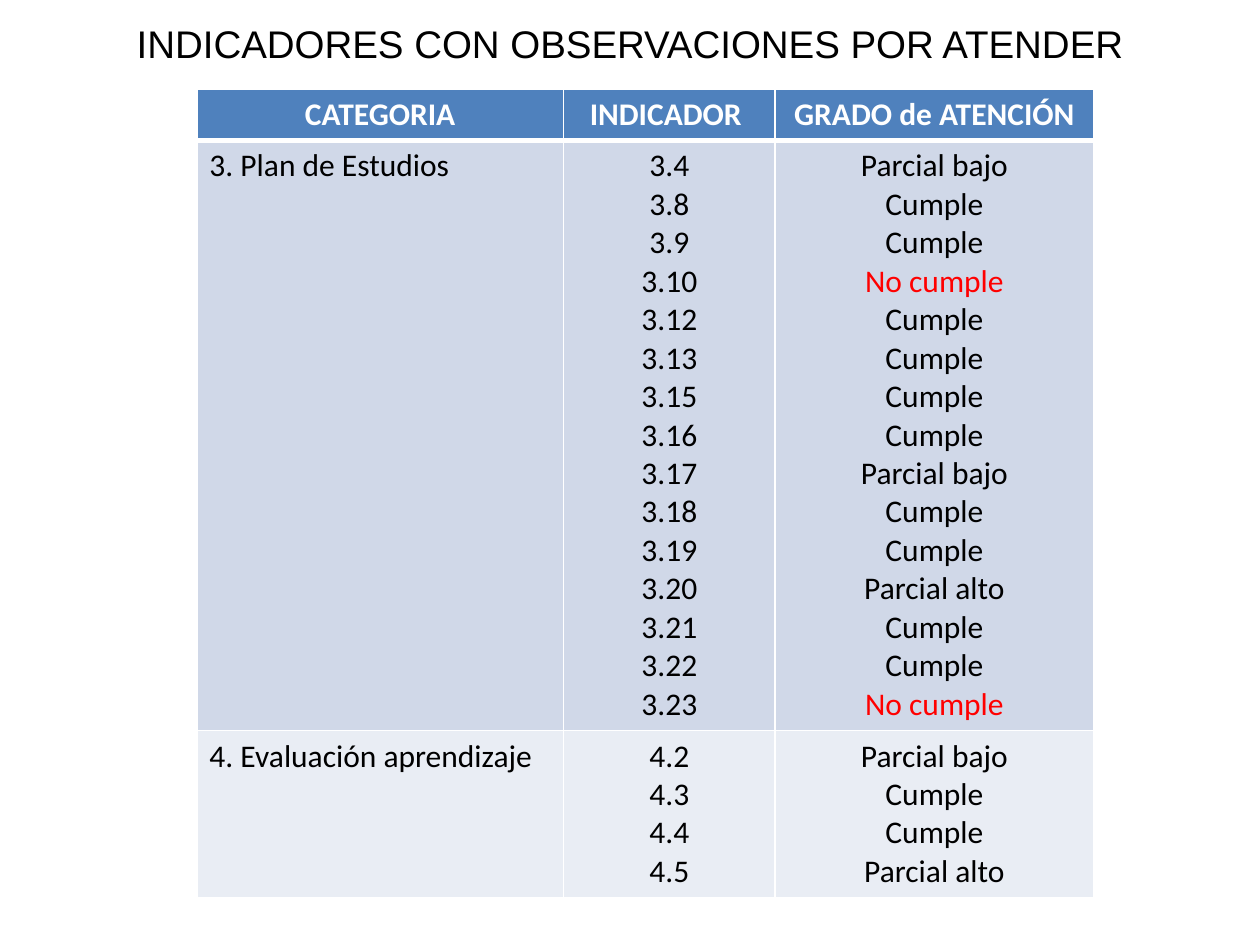
import dataclasses

import lxml.etree
import pptx
import pptx.dml.color
import pptx.enum.text
import pptx.oxml.ns
import pptx.util

Pt = pptx.util.Pt
ALIGN = pptx.enum.text.PP_ALIGN

WHITE, BLACK, RED = "FFFFFF", "000000", "FF0000"
HEADER_FILL = "4F81BD"
COLUMN_WIDTHS = (209.5, 121, 182)
HEADER_HEIGHT = 29.2
LINE_HEIGHT = 22
CELL_PADDING = 7.2


@dataclasses.dataclass
class Category:
    name: str
    fill: str
    grades: dict[str, str]


HEADINGS = ("CATEGORIA", "INDICADOR ", "GRADO de ATENCIÓN")
CATEGORIES = (
    Category("3. Plan de Estudios", "D0D8E8", {
        "3.4": "Parcial bajo", "3.8": "Cumple", "3.9": "Cumple",
        "3.10": "No cumple", "3.12": "Cumple", "3.13": "Cumple",
        "3.15": "Cumple", "3.16": "Cumple", "3.17": "Parcial bajo",
        "3.18": "Cumple", "3.19": "Cumple", "3.20": "Parcial alto",
        "3.21": "Cumple", "3.22": "Cumple", "3.23": "No cumple",
    }),
    Category("4. Evaluación aprendizaje", "E9EDF4", {
        "4.2": "Parcial bajo", "4.3": "Cumple",
        "4.4": "Cumple", "4.5": "Parcial alto",
    }),
)


def color(value: str) -> pptx.dml.color.RGBColor:
    return pptx.dml.color.RGBColor.from_string(value)


def set_borders(cell, top: float, bottom: float) -> None:
    """Draw white cell borders; they must precede the fill in the XML."""
    properties = cell._tc.get_or_add_tcPr()
    widths = {"lnL": 1, "lnR": 1, "lnT": top, "lnB": bottom}
    for index, (tag, width) in enumerate(widths.items()):
        line = lxml.etree.Element(pptx.oxml.ns.qn(f"a:{tag}"), w=str(Pt(width)))
        fill = lxml.etree.SubElement(line, pptx.oxml.ns.qn("a:solidFill"))
        lxml.etree.SubElement(fill, pptx.oxml.ns.qn("a:srgbClr"), val=WHITE)
        properties.insert(index, line)


def write_cell(cell, lines: list[str], fill: str, font_color: str = BLACK,
               align=ALIGN.CENTER, bold: bool = False,
               top: float = 1, bottom: float = 1) -> None:
    cell.fill.solid()
    cell.fill.fore_color.rgb = color(fill)
    set_borders(cell, top, bottom)
    cell.text_frame.text = "\n".join(lines)
    for para in cell.text_frame.paragraphs:
        para.alignment = align
        para.font.name = "Calibri"
        para.font.size = Pt(18)
        para.font.bold = bold
        para.font.color.rgb = color(RED if para.text == "No cumple" else font_color)


def add_title(page, text: str) -> None:
    box = page.shapes.title
    box.left, box.top, box.width, box.height = Pt(0), Pt(8), Pt(720), Pt(34)
    frame = box.text_frame
    frame.text = text
    frame.word_wrap = True
    frame.auto_size = pptx.enum.text.MSO_AUTO_SIZE.SHAPE_TO_FIT_TEXT
    frame.vertical_anchor = pptx.enum.text.MSO_ANCHOR.TOP
    para = frame.paragraphs[0]
    para.alignment = ALIGN.CENTER
    para.font.name = "Arial"
    para.font.size = Pt(22)
    para.font.color.rgb = color(BLACK)


def add_grade_table(page) -> None:
    heights = [HEADER_HEIGHT] + [
        LINE_HEIGHT * len(category.grades) + CELL_PADDING for category in CATEGORIES]
    table = page.shapes.add_table(
        len(heights), len(HEADINGS), Pt(112.5), Pt(51.2),
        Pt(sum(COLUMN_WIDTHS)), Pt(sum(heights))).table
    for column, width in zip(table.columns, COLUMN_WIDTHS):
        column.width = Pt(width)
    for row, height in zip(table.rows, heights):
        row.height = Pt(height)

    # Header row, with a thick rule beneath
    for cell, heading in zip(table.rows[0].cells, HEADINGS):
        write_cell(cell, [heading], HEADER_FILL, WHITE, bold=True, bottom=3)

    # One row per category
    for number, category in enumerate(CATEGORIES, start=1):
        name, indicators, grades = table.rows[number].cells
        top = 3 if number == 1 else 1
        write_cell(name, [category.name], category.fill, align=ALIGN.LEFT, top=top)
        write_cell(indicators, list(category.grades), category.fill, top=top)
        write_cell(grades, list(category.grades.values()), category.fill, top=top)


def main() -> None:
    deck = pptx.Presentation()
    deck.slide_width, deck.slide_height = Pt(720), Pt(540)
    page = deck.slides.add_slide(deck.slide_layouts[5])
    add_title(page, "INDICADORES CON OBSERVACIONES POR ATENDER")
    add_grade_table(page)
    deck.save("out.pptx")


if __name__ == "__main__":
    main()
